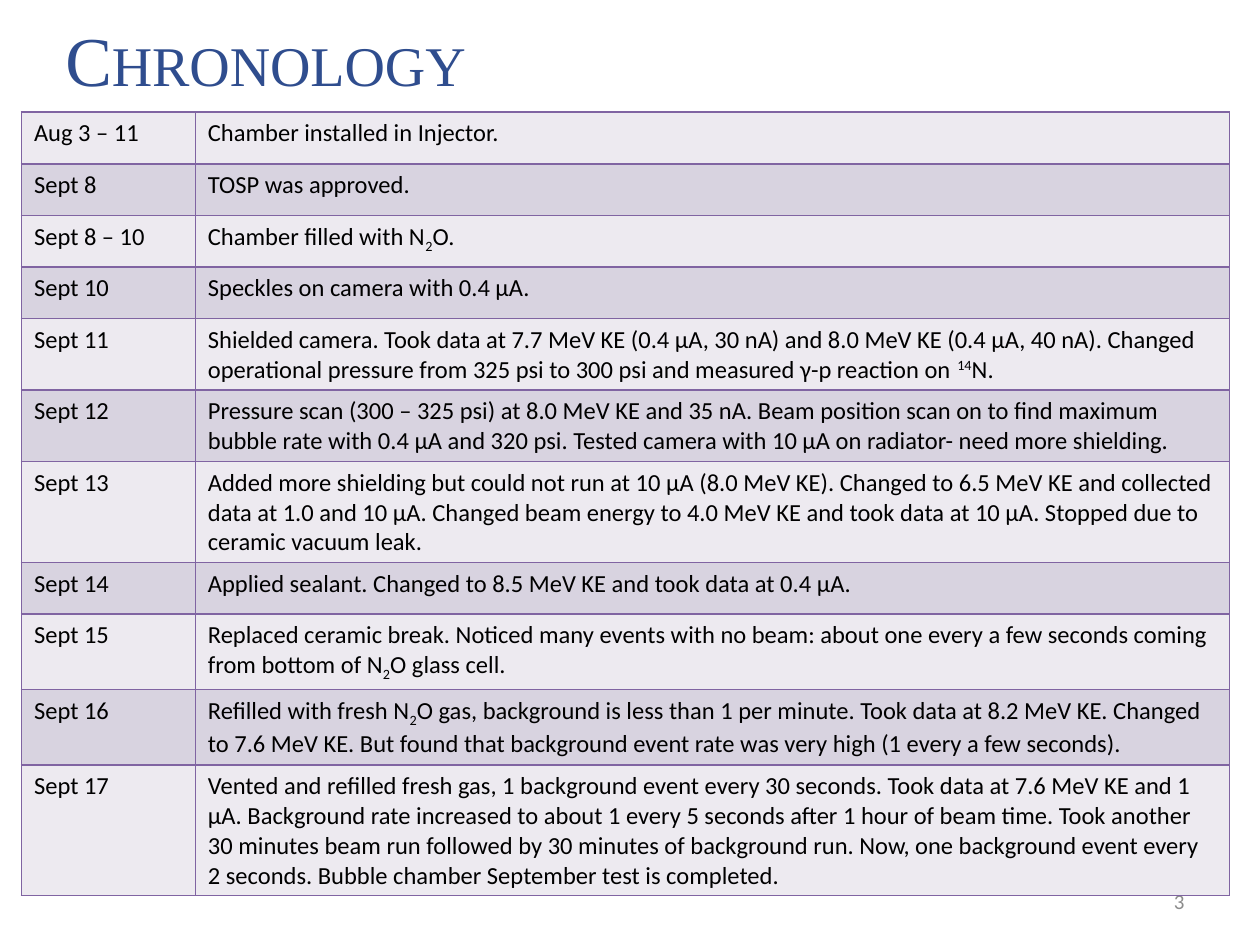
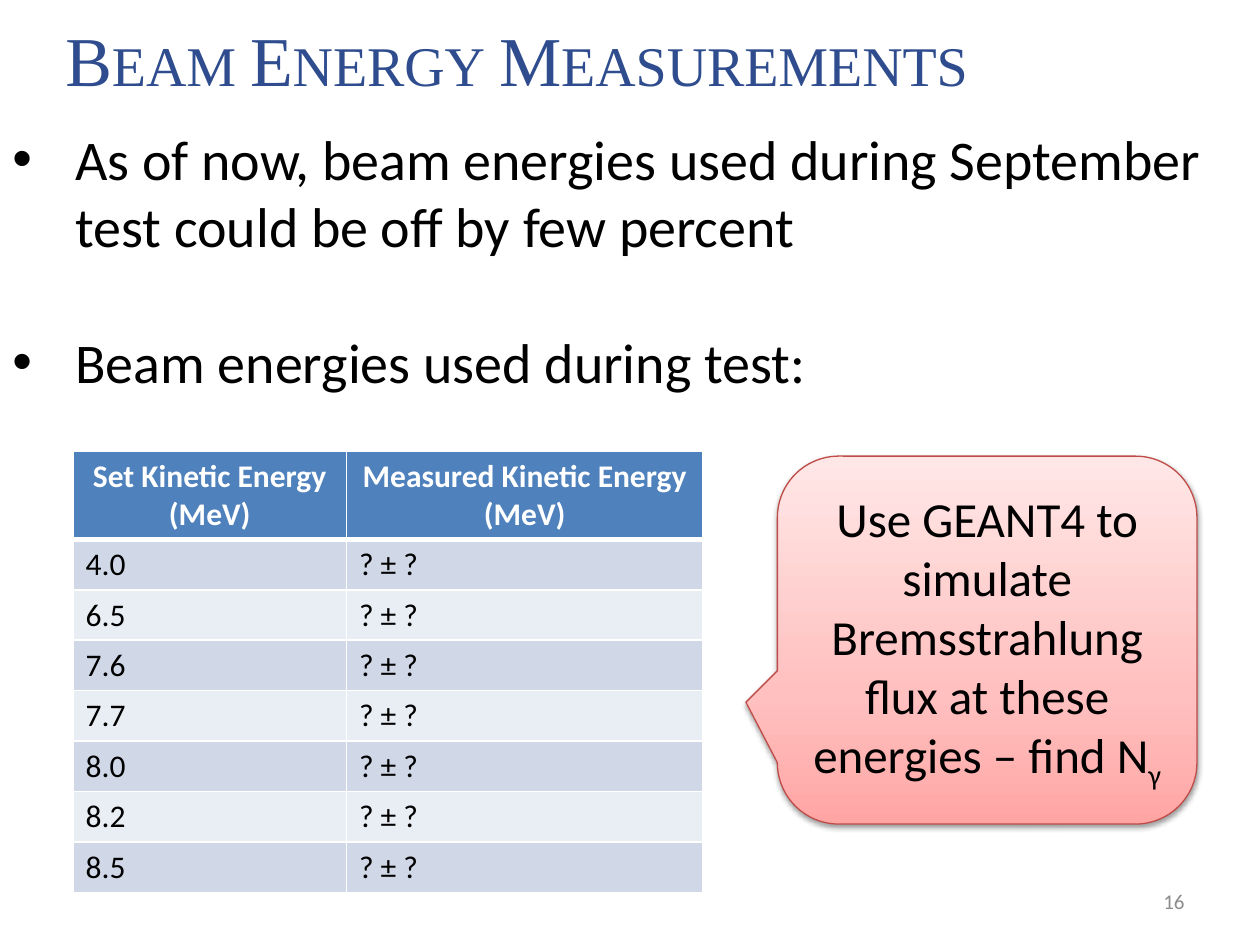
from copy import deepcopy
from pptx import Presentation
from pptx.dml.color import RGBColor
from pptx.enum.shapes import MSO_SHAPE
from pptx.enum.text import MSO_ANCHOR, PP_ALIGN
from pptx.oxml import parse_xml
from pptx.oxml.ns import nsdecls, qn
from pptx.util import Inches, Pt

BLACK = RGBColor(0x00, 0x00, 0x00)
WHITE = RGBColor(0xFF, 0xFF, 0xFF)
TITLE_BLUE = RGBColor(0x2F, 0x4D, 0x8E)
NUMBER_GRAY = RGBColor(0x8C, 0x8C, 0x8C)
PURPLE = RGBColor(0x80, 0x64, 0xA2)
PURPLE_BANDS = [RGBColor(0xED, 0xEA, 0xF0), RGBColor(0xD8, 0xD3, 0xE0)]
HEADER_BLUE = RGBColor(0x4F, 0x81, 0xBD)
BLUE_BANDS = [RGBColor(0xD0, 0xD8, 0xE8), RGBColor(0xE9, 0xED, 0xF4)]
CALLOUT_LINE = RGBColor(0xBF, 0x4C, 0x48)
CALLOUT_STOPS = [(0, RGBColor(0xFF, 0xA6, 0xA5)),
                 (0.35, RGBColor(0xFF, 0xC0, 0xBF)),
                 (1, RGBColor(0xFF, 0xE7, 0xE7))]
BODY_FONT = "Calibri"
TITLE_FONT = "Times New Roman"
BASELINES = {"_": "-25000", "^": "30000"}


def write(frame, text, size, color=BLACK, font=BODY_FONT, align=PP_ALIGN.LEFT):
    """Fill a frame; pieces between bars starting with _ or ^ are sub- or superscript."""
    frame.word_wrap = True
    frame.text = text
    for para in frame.paragraphs:
        para.alignment = align
        pieces = para.text.split("|")
        para.clear()
        for piece in pieces:
            span = para.add_run()
            span.text = piece.lstrip("_^")
            span.font.size = Pt(size)
            span.font.name = font
            span.font.color.rgb = color
            if piece[:1] in BASELINES:
                span.font._element.set("baseline", BASELINES[piece[0]])


def paint_cell(cell, fill, border, top=1, bottom=1):
    cell.fill.solid()
    cell.fill.fore_color.rgb = fill
    widths = {"lnL": 1, "lnR": 1, "lnT": top, "lnB": bottom}
    for position, (side, width) in enumerate(widths.items()):
        cell._tc.get_or_add_tcPr().insert(position, parse_xml(
            f'<a:{side} {nsdecls("a")} w="{Pt(width)}"><a:solidFill>'
            f'<a:srgbClr val="{border}"/></a:solidFill></a:{side}>'))


deck = Presentation()
deck.slide_width = Inches(10)
deck.slide_height = Inches(7.5)

# Shared page number and title
pages = []
for number, title in [("3", "Chronology"), ("16", "Beam Energy Measurements")]:
    page = deck.slides.add_slide(deck.slide_layouts[6])
    number_box = page.shapes.add_textbox(Inches(7.17), Inches(6.95), Inches(2.33), Inches(0.4))
    write(number_box.text_frame, number, 12, NUMBER_GRAY, align=PP_ALIGN.RIGHT)
    title_box = page.shapes.add_textbox(Inches(0.42), 0, Inches(9), Inches(0.93))
    write(title_box.text_frame, title, 40, TITLE_BLUE, TITLE_FONT)
    title_box.text_frame.paragraphs[0].runs[0].font._element.set("cap", "small")
    for box in (number_box, title_box):
        box.text_frame.vertical_anchor = MSO_ANCHOR.MIDDLE
    pages.append(page)
chronology_page, energy_page = pages

# Chronology table
EVENTS = [
    ("Aug 3 – 11", "Chamber installed in Injector."),
    ("Sept 8", "TOSP was approved."),
    ("Sept 8 – 10", "Chamber filled with N|_2|O."),
    ("Sept 10", "Speckles on camera with 0.4 μA."),
    ("Sept 11", "Shielded camera. Took data at 7.7 MeV KE (0.4 μA, 30 nA) and 8.0 MeV KE "
                "(0.4 μA, 40 nA). Changed operational pressure from 325 psi to 300 psi and "
                "measured γ-p reaction on |^14|N."),
    ("Sept 12", "Pressure scan (300 – 325 psi) at 8.0 MeV KE and 35 nA. Beam position scan on "
                "to find maximum bubble rate with 0.4 μA and 320 psi. Tested camera with "
                "10 μA on radiator- need more shielding."),
    ("Sept 13", "Added more shielding but could not run at 10 μA (8.0 MeV KE). Changed to "
                "6.5 MeV KE and collected data at 1.0 and 10 μA. Changed beam energy to "
                "4.0 MeV KE and took data at 10 μA. Stopped due to ceramic vacuum leak."),
    ("Sept 14", "Applied sealant. Changed to 8.5 MeV KE and took data at 0.4 μA."),
    ("Sept 15", "Replaced ceramic break. Noticed many events with no beam: about one every a "
                "few seconds coming from bottom of N|_2|O glass cell."),
    ("Sept 16", "Refilled with fresh N|_2|O gas, background is less than 1 per minute. Took "
                "data at 8.2 MeV KE. Changed to 7.6 MeV KE. But found that background event "
                "rate was very high (1 every a few seconds)."),
    ("Sept 17", "Vented and refilled fresh gas, 1 background event every 30 seconds. Took "
                "data at 7.6 MeV KE and 1 μA. Background rate increased to about 1 every "
                "5 seconds after 1 hour of beam time. Took another 30 minutes beam run "
                "followed by 30 minutes of background run. Now, one background event every "
                "2 seconds. Bubble chamber September test is completed."),
]
chronology = chronology_page.shapes.add_table(
    len(EVENTS), 2, Inches(0.17), Inches(0.89), Inches(9.59), Inches(0.41 * len(EVENTS))).table
chronology.first_row = chronology.horz_banding = False
chronology.columns[0].width = Inches(1.38)
chronology.columns[1].width = Inches(8.21)
for row, event in enumerate(EVENTS):
    for column, text in enumerate(event):
        cell = chronology.cell(row, column)
        write(cell.text_frame, text, 14)
        paint_cell(cell, PURPLE_BANDS[row % 2], PURPLE)

# Bullets on beam energies
bullet_box = energy_page.shapes.add_textbox(0, Inches(0.94), Inches(10), Inches(2.26))
write(bullet_box.text_frame, "As of now, beam energies used during September test could be off "
      "by few percent\nBeam energies used during test:", 32)
for para in bullet_box.text_frame.paragraphs:
    properties = para._p.get_or_add_pPr()
    properties.set("marL", str(Inches(0.5)))
    properties.set("indent", str(Inches(-0.5)))
    properties.append(parse_xml(f'<a:buFont {nsdecls("a")} typeface="Arial"/>'))
    properties.append(parse_xml(f'<a:buChar {nsdecls("a")} char="•"/>'))
bullet_box.text_frame.paragraphs[1].space_before = Pt(39)

# Energy table
HEADINGS = ["Set Kinetic Energy\n(MeV)", "Measured Kinetic Energy\n(MeV)"]
ENERGIES = ["4.0", "6.5", "7.6", "7.7", "8.0", "8.2", "8.5"]
energy_table = energy_page.shapes.add_table(
    len(ENERGIES) + 1, 2, Inches(0.58), Inches(3.58), Inches(5), Inches(3.5)).table
energy_table.first_row = energy_table.horz_banding = False
energy_table.columns[0].width = Inches(2.17)
energy_table.columns[1].width = Inches(2.83)
for row in energy_table.rows:
    row.height = Inches(0.4)
energy_table.rows[0].height = Inches(0.7)
for column, heading in enumerate(HEADINGS):
    cell = energy_table.cell(0, column)
    write(cell.text_frame, heading, 18, WHITE, align=PP_ALIGN.CENTER)
    for para in cell.text_frame.paragraphs:
        para.runs[0].font.bold = True
    paint_cell(cell, HEADER_BLUE, WHITE, bottom=3)
for row, energy in enumerate(ENERGIES, start=1):
    for column, text in enumerate([energy, "? ± ?"]):
        cell = energy_table.cell(row, column)
        write(cell.text_frame, text, 18)
        paint_cell(cell, BLUE_BANDS[(row - 1) % 2], WHITE, top=3 if row == 1 else 1)

# Simulation callout
callout = energy_page.shapes.add_shape(
    MSO_SHAPE.ROUNDED_RECTANGULAR_CALLOUT, Inches(6.17), Inches(3.62), Inches(3.33), Inches(2.92))
for index, adjustment in enumerate([-0.575, 0.169, 0.167]):
    callout.adjustments[index] = adjustment
callout.line.color.rgb = CALLOUT_LINE
callout.line.width = Pt(0.75)
callout.fill.gradient()
callout.fill.gradient_angle = 90
stop_list = callout._element.spPr.find(qn("a:gradFill")).find(qn("a:gsLst"))
stop_list.append(deepcopy(stop_list[0]))
for stop, (position, color) in zip(callout.fill.gradient_stops, CALLOUT_STOPS):
    stop.position = position
    stop.color.rgb = color
callout.shadow.inherit = False
callout._element.spPr.find(qn("a:effectLst")).append(parse_xml(
    f'<a:outerShdw {nsdecls("a")} blurRad="{Pt(3.1)}" dist="{Pt(1.6)}" dir="5400000" '
    'rotWithShape="0"><a:srgbClr val="000000"><a:alpha val="38000"/></a:srgbClr></a:outerShdw>'))
callout.text_frame.vertical_anchor = MSO_ANCHOR.MIDDLE
write(callout.text_frame, "Use GEANT4 to simulate Bremsstrahlung flux at these energies – "
      "find N|_γ", 28, align=PP_ALIGN.CENTER)

deck.save("out.pptx")
